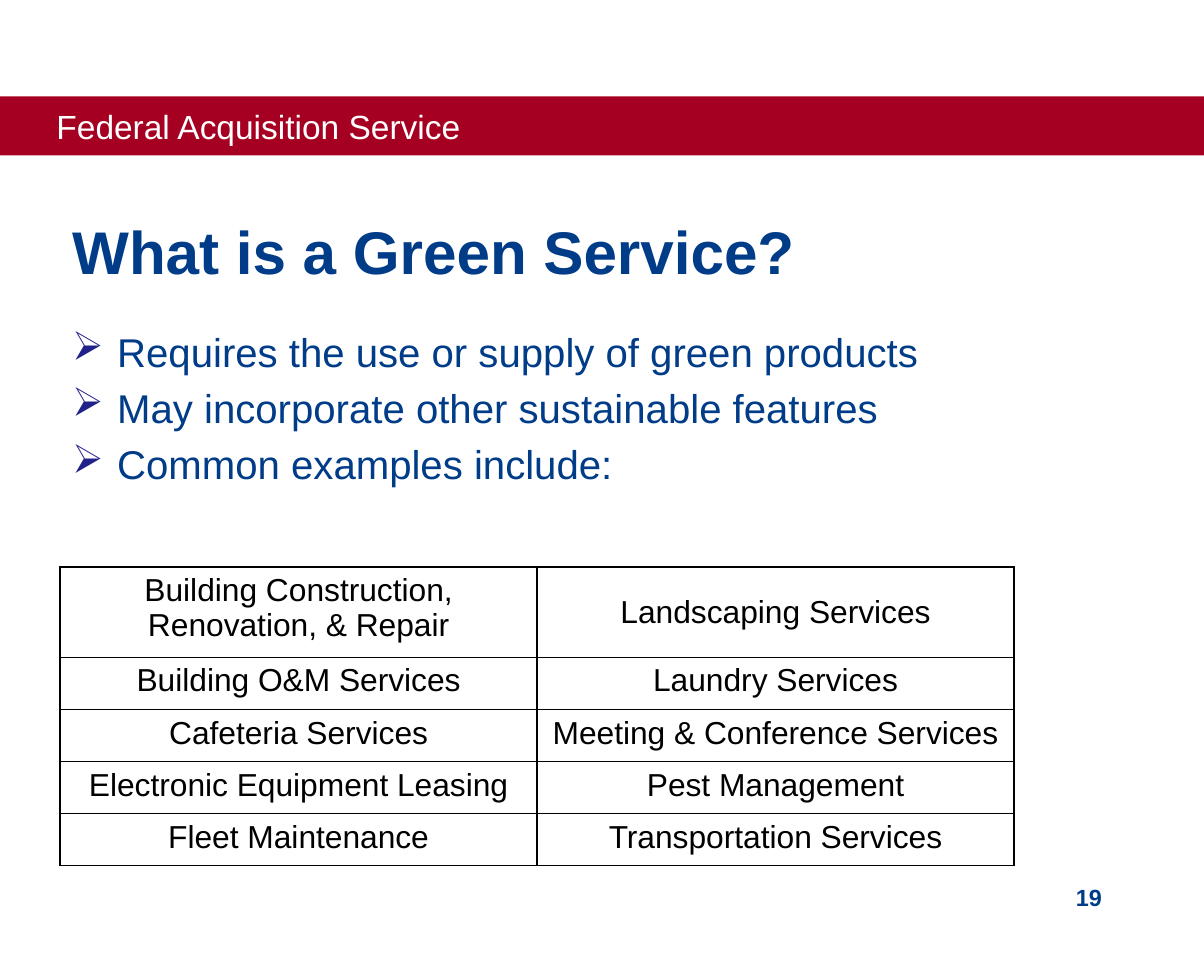
"""Builds the slide on green services."""
from lxml.etree import SubElement as Sub
from pptx import Presentation
from pptx.dml.color import RGBColor as RGB
from pptx.enum.shapes import MSO_SHAPE as Shape
from pptx.enum.text import MSO_ANCHOR as Anchor, MSO_AUTO_SIZE as Fit, PP_ALIGN as Align
from pptx.oxml.ns import qn
from pptx.util import Pt

RED = RGB(0xA5, 0x00, 0x21)
NAVY = RGB(0x01, 0x3C, 0x88)
VIOLET = RGB(0x21, 0x21, 0x8A)
WHITE = RGB(0xFF, 0xFF, 0xFF)
BLACK = RGB(0x00, 0x00, 0x00)

WIDTH, HEIGHT = 720, 576
LEFT = 36
POINTS = [
    "Requires the use or supply of green products",
    "May incorporate other sustainable features",
    "Common examples include:",
]
SERVICES = [
    ("Building Construction, Renovation, & Repair", "Landscaping Services"),
    ("Building O&M Services", "Laundry Services"),
    ("Cafeteria Services", "Meeting & Conference Services"),
    ("Electronic Equipment Leasing", "Pest Management"),
    ("Fleet Maintenance", "Transportation Services"),
]


def style(para, size, color, align=Align.LEFT, bold=False):
    """Set the font and alignment of a paragraph."""
    para.alignment = align
    font = para.font
    font.name, font.size, font.bold = "Arial", Pt(size), bold
    font.color.rgb = color


def indent(para, left, first):
    """Set the left margin and first-line indent of a paragraph."""
    props = para._p.get_or_add_pPr()
    props.set("marL", str(Pt(left)))
    props.set("indent", str(Pt(first)))
    return props


def add_band(slide, text):
    """Add the full-width header band."""
    band = slide.shapes.add_shape(Shape.RECTANGLE, 0, Pt(57.6), Pt(WIDTH), Pt(35.3))
    band.shadow.inherit = False
    band.fill.solid()
    band.fill.fore_color.rgb = RED
    band.line.fill.background()
    frame = band.text_frame
    frame.text = text
    frame.vertical_anchor = Anchor.MIDDLE
    style(frame.paragraphs[0], 20, WHITE)
    indent(frame.paragraphs[0], 27.4, -0.7)


def set_title(slide, text):
    """Place and format the title."""
    title = slide.shapes.title
    title.left, title.top = Pt(LEFT), Pt(124.6)
    title.width, title.height = Pt(612), Pt(49)
    frame = title.text_frame
    frame.text = text
    frame.auto_size = Fit.NONE
    frame.vertical_anchor = Anchor.TOP
    style(frame.paragraphs[0], 36, NAVY, bold=True)


def add_text(slide, lines, left, top, width, height):
    """Add a wrapped text box with one paragraph per line."""
    box = slide.shapes.add_textbox(Pt(left), Pt(top), Pt(width), Pt(height))
    frame = box.text_frame
    frame.word_wrap = True
    frame.text = "\n".join(lines)
    return frame.paragraphs


def add_points(slide, lines):
    """Add the arrow-bulleted list."""
    for i, para in enumerate(add_text(slide, lines, LEFT, 192.2, 612, 183)):
        para.space_before = Pt(4.8 if i else 0)
        props = indent(para, 27, -27)
        tint = Sub(props, qn("a:buClr"))
        Sub(tint, qn("a:srgbClr"), val=str(VIOLET))
        Sub(props, qn("a:buChar"), char="➢")
        style(para, 24, NAVY)


def add_edges(cell):
    """Draw a thin black border on all sides of a cell."""
    props = cell._tc.get_or_add_tcPr()
    for i, side in enumerate(("lnL", "lnR", "lnT", "lnB")):
        edge = props.makeelement(qn(f"a:{side}"), {"w": str(Pt(1))})
        props.insert(i, edge)
        fill = Sub(edge, qn("a:solidFill"))
        Sub(fill, qn("a:srgbClr"), val=str(BLACK))


def add_grid(slide, rows):
    """Add the bordered table of services."""
    heights = [54] + [31.2] * (len(rows) - 1)
    grid = slide.shapes.add_table(
        len(rows), 2, Pt(LEFT), Pt(339.1), Pt(570.4), Pt(sum(heights))
    ).table
    grid.first_row = grid.horz_banding = False
    for row, height, texts in zip(grid.rows, heights, rows):
        row.height = Pt(height)
        for cell, text in zip(row.cells, texts):
            cell.text = text
            cell.fill.background()
            style(cell.text_frame.paragraphs[0], 19, BLACK, Align.CENTER)
            add_edges(cell)
    grid.cell(0, 1).vertical_anchor = Anchor.MIDDLE


def main():
    """Build and save the slide."""
    deck = Presentation()
    deck.slide_width, deck.slide_height = Pt(WIDTH), Pt(HEIGHT)
    slide = deck.slides.add_slide(deck.slide_layouts[5])
    add_band(slide, "Federal Acquisition Service")
    set_title(slide, "What is a Green Service?")
    add_points(slide, POINTS)
    number = add_text(slide, ["19"], 516.2, 524.9, 149.8, 38)
    style(number[0], 14, NAVY, Align.RIGHT, True)
    add_grid(slide, SERVICES)
    deck.save("out.pptx")


if __name__ == "__main__":
    main()
